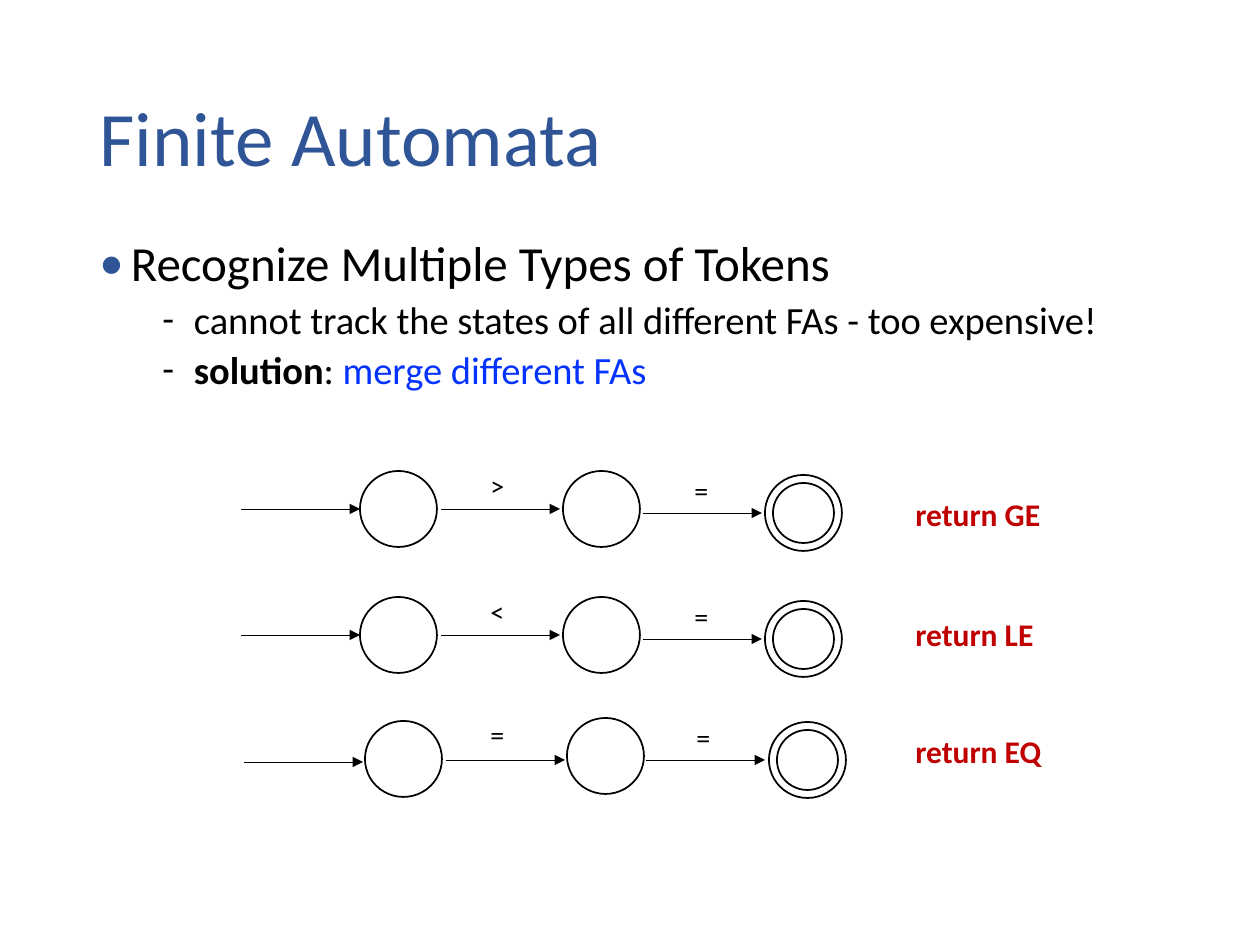
from lxml.etree import SubElement
from pptx import Presentation
from pptx.dml.color import RGBColor
from pptx.enum.shapes import MSO_CONNECTOR, MSO_SHAPE
from pptx.enum.text import MSO_ANCHOR, PP_ALIGN
from pptx.oxml.ns import qn
from pptx.util import Emu, Pt

SCALE = 914400 / 126  # EMU in one px
FONT = "Calibri"
COLORS = {"title": "2F5597", "ink": "000000", "accent": "0432FF", "result": "C00000"}

ARROW_LENGTH = 119
STATE_SIZE = (77, 76)
ACCEPT_INSET = 8
RESULT_LEFT = 903

# Places of the parts, relative to the top left of an automaton's box
UPPER = {
    "states": [(119, 0), (322, 0), (524, 4)],
    "arrows": [(0, 38), (200, 38), (402, 42)],
    "labels": [(237, -9), (441, -4)],
}
LOWER = {
    "states": [(121, 3), (323, 0), (525, 4)],
    "arrows": [(0, 44), (202, 42), (402, 42)],
    "labels": [(234, -7), (440, -4)],
}
# Box left, box top, layout, symbols, result, top of result
AUTOMATA = [
    (241, 471, UPPER, (">", "="), "return GE", 489),
    (241, 597, UPPER, ("<", "="), "return LE", 609),
    (244, 718, LOWER, ("=", "="), "return EQ", 726),
]


def px(*lengths):
    return [Emu(round(length * SCALE)) for length in lengths]


def color(name):
    return RGBColor.from_string(COLORS[name])


def add_run(paragraph, text, size=16, ink="ink", bold=False):
    run = paragraph.add_run()
    run.text = text
    run.font.name = FONT
    run.font.size = Pt(size)
    run.font.bold = bold
    run.font.color.rgb = color(ink)


def add_text(slide, box, text, wrap=True, **style):
    frame = slide.shapes.add_textbox(*px(*box)).text_frame
    frame.word_wrap = wrap
    add_run(frame.paragraphs[0], text, **style)


def set_bullet(paragraph, character, indent, ink):
    properties = paragraph._p.get_or_add_pPr()
    left, hanging = px(indent, -31.5)
    properties.set("marL", str(left))
    properties.set("indent", str(hanging))
    bullet_color = SubElement(properties, qn("a:buClr"))
    SubElement(bullet_color, qn("a:srgbClr"), val=COLORS[ink])
    SubElement(properties, qn("a:buFont"), typeface=FONT)
    SubElement(properties, qn("a:buChar"), char=character)


def add_circle(slide, left, top, width, height):
    circle = slide.shapes.add_shape(MSO_SHAPE.OVAL, *px(left, top, width, height))
    circle.shadow.inherit = False
    circle.fill.background()
    circle.line.color.rgb = color("ink")
    circle.line.width = Pt(1)


def add_arrow(slide, left, top):
    arrow = slide.shapes.add_connector(
        MSO_CONNECTOR.STRAIGHT, *px(left, top, left + ARROW_LENGTH, top))
    arrow.line.color.rgb = color("ink")
    arrow.line.width = Pt(0.5)
    SubElement(arrow.line._get_or_add_ln(), qn("a:tailEnd"), type="triangle")
    SubElement(arrow._element.spPr, qn("a:effectLst"))


def add_title(slide, box, text):
    title = slide.shapes.title
    title.left, title.top, title.width, title.height = px(*box)
    frame = title.text_frame
    frame.vertical_anchor = MSO_ANCHOR.MIDDLE
    paragraph = frame.paragraphs[0]
    paragraph.alignment = PP_ALIGN.LEFT
    paragraph.line_spacing = 0.9
    add_run(paragraph, text, size=44, ink="title")


def add_body(slide, box):
    frame = slide.shapes.add_textbox(*px(*box)).text_frame
    frame.word_wrap = True
    points = [
        (0, [("Recognize Multiple Types of Tokens", {})]),
        (1, [("cannot track the states of all different FAs - too expensive!", {})]),
        (1, [("solution", {"bold": True}), (": ", {}),
             ("merge different FAs", {"ink": "accent"})]),
    ]
    for index, (level, runs) in enumerate(points):
        paragraph = frame.add_paragraph() if index else frame.paragraphs[0]
        paragraph.level = level
        paragraph.line_spacing = 0.9
        paragraph.space_before = Pt(5 if level else 10)
        if level:
            set_bullet(paragraph, "-", 94.5, "ink")
        else:
            set_bullet(paragraph, "•", 31.5, "title")
        for text, style in runs:
            add_run(paragraph, text, size=22 if level else 28, **style)


def add_automaton(slide, left, top, layout, symbols, result, result_top):
    # States, the last one accepting
    width, height = STATE_SIZE
    for x, y in layout["states"]:
        add_circle(slide, left + x, top + y, width, height)
    add_circle(slide, left + x + ACCEPT_INSET, top + y + ACCEPT_INSET,
               width - 2 * ACCEPT_INSET, height - 2 * ACCEPT_INSET)
    # Transitions and their symbols
    for x, y in layout["arrows"]:
        add_arrow(slide, left + x, top + y)
    for (x, y), symbol in zip(layout["labels"], symbols):
        label_width = 55 if symbol == "=" else 37
        add_text(slide, (left + x, top + y, label_width, 47), symbol)
    # Returned token
    add_text(slide, (RESULT_LEFT, result_top, 151, 50), result,
             wrap=False, size=18, ink="result", bold=True)


def main():
    presentation = Presentation()
    presentation.slide_width, presentation.slide_height = px(1260, 945)
    slide = presentation.slides.add_slide(presentation.slide_layouts[5])
    add_title(slide, (87, 50, 1086, 183), "Finite Automata")
    add_body(slide, (87, 233, 1149, 218))
    for automaton in AUTOMATA:
        add_automaton(slide, *automaton)
    presentation.save("out.pptx")


if __name__ == "__main__":
    main()
